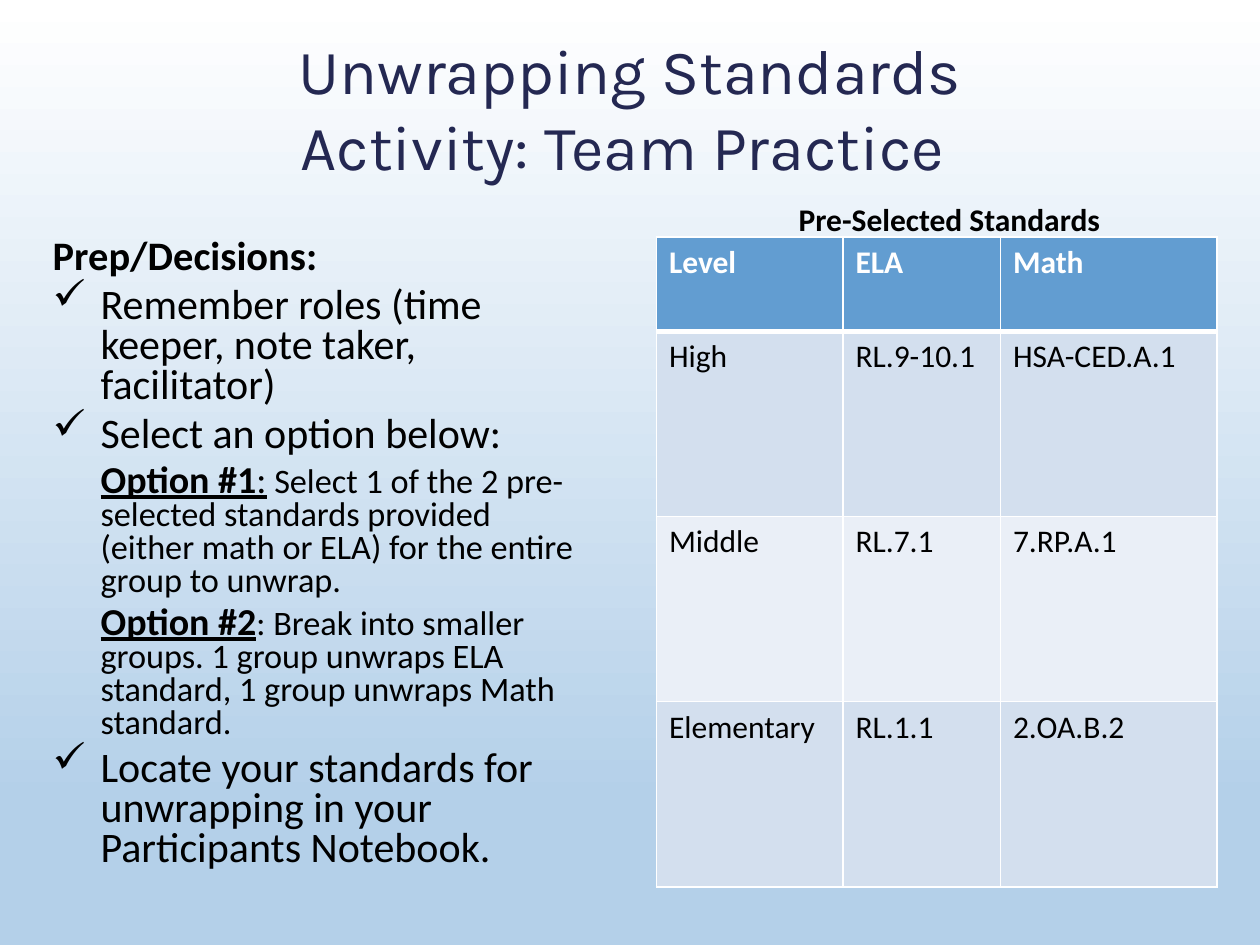
from lxml.etree import SubElement
from pptx import Presentation
from pptx.dml.color import RGBColor
from pptx.enum.text import MSO_ANCHOR, PP_ALIGN
from pptx.oxml.ns import qn
from pptx.util import Inches, Pt

BLACK, WHITE, NAVY = "000000", "FFFFFF", "242852"
HEADER_FILL, BAND_FILLS = "629DD1", ("D3DFEE", "EAEFF7")
HANG = 0.38

COLUMN_WIDTHS = (1.48, 1.25, 1.72)
ROW_HEIGHTS = (0.75, 1.47, 1.47, 1.47)
STANDARDS = (
    ("Level", "ELA", "Math"),
    ("High", "RL.9-10.1", "HSA-CED.A.1"),
    ("Middle", "RL.7.1", "7.RP.A.1"),
    ("Elementary", "RL.1.1", "2.OA.B.2"),
)

# Each paragraph: bullet, first-line indent, space before, runs of
# (text, size, bold, underline)
PREP_STEPS = (
    (None, -HANG, 0, [("Prep/Decisions:", 23.1, True, False)]),
    ("✓", -HANG, 5, [("Remember roles (time keeper, note taker, facilitator)", 24, False, False)]),
    ("✓", -HANG, 5, [("Select an option below:", 24, False, False)]),
    (None, 0, 4, [
        ("Option #1", 21.7, True, True),
        (":", 21.7, False, True),
        (" Select 1 of the 2 pre-selected standards provided "
         "(either math or ELA) for the entire group to unwrap.", 19.6, False, False),
    ]),
    (None, 0, 4, [
        ("Option #2", 21.7, True, True),
        (": Break into smaller groups. 1 group unwraps ELA standard, "
         "1 group unwraps Math standard.", 19.6, False, False),
    ]),
    ("✓", -HANG, 5, [("Locate your standards for unwrapping in your Participants Notebook.",
                      24, False, False)]),
)


def rgb(value):
    return RGBColor.from_string(value)


class SlideBuilder:
    def __init__(self, slide, font="Calibri"):
        self.slide = slide
        self.font = font

    def background(self, stops, angle):
        fill = self.slide.background.fill
        fill.gradient()
        fill.gradient_angle = angle
        for stop, (position, color) in zip(fill.gradient_stops, stops):
            stop.position = position
            stop.color.rgb = rgb(color)

    def style(self, r, size, color=BLACK, bold=False, underline=False, font=None):
        r.font.name = font or self.font
        r.font.size = Pt(size)
        r.font.bold = bold
        r.font.underline = underline
        r.font.color.rgb = rgb(color)

    def frame(self, left, top, width, height):
        box = self.slide.shapes.add_textbox(
            Inches(left), Inches(top), Inches(width), Inches(height))
        tf = box.text_frame
        tf.word_wrap = True
        return tf

    def text(self, at, content, size, align=PP_ALIGN.LEFT, anchor=MSO_ANCHOR.TOP, **style):
        tf = self.frame(*at)
        tf.vertical_anchor = anchor
        p = tf.paragraphs[0]
        p.text = content
        p.alignment = align
        for r in p.runs:
            self.style(r, size, **style)

    def steps(self, at, paragraphs):
        tf = self.frame(*at)
        for i, (bullet, indent, before, runs) in enumerate(paragraphs):
            p = tf.add_paragraph() if i else tf.paragraphs[0]
            p.line_spacing = 0.8
            p.space_before = Pt(before)
            pPr = p._p.get_or_add_pPr()
            pPr.set("marL", str(Inches(HANG)))
            pPr.set("indent", str(Inches(indent)))
            if bullet:
                SubElement(pPr, qn("a:buChar"), char=bullet)
            else:
                SubElement(pPr, qn("a:buNone"))
            for content, size, bold, underline in runs:
                r = p.add_run()
                r.text = content
                self.style(r, size, bold=bold, underline=underline)

    def borders(self, cell, **widths):
        tcPr = cell._tc.get_or_add_tcPr()
        for side in ("L", "R", "T", "B"):
            ln = SubElement(tcPr, qn(f"a:ln{side}"), w=str(Pt(widths.get(side, 1))))
            fill = SubElement(ln, qn("a:solidFill"))
            SubElement(fill, qn("a:srgbClr"), val=WHITE)

    def table(self, left, top, rows, widths, heights, size):
        table = self.slide.shapes.add_table(
            len(rows), len(widths), Inches(left), Inches(top),
            Inches(sum(widths)), Inches(sum(heights))).table
        for column, width in zip(table.columns, widths):
            column.width = Inches(width)
        for i, (row, height) in enumerate(zip(rows, heights)):
            table.rows[i].height = Inches(height)
            header = i == 0
            for j, content in enumerate(row):
                cell = table.cell(i, j)
                self.borders(cell, B=3 if header else 1, T=3 if i == 1 else 1)
                cell.fill.solid()
                cell.fill.fore_color.rgb = rgb(HEADER_FILL if header else BAND_FILLS[(i - 1) % 2])
                cell.text_frame.text = content
                self.style(cell.text_frame.paragraphs[0].runs[0], size,
                           color=WHITE if header else BLACK, bold=header)


def main():
    prs = Presentation()
    prs.slide_width, prs.slide_height = Inches(10), Inches(7.5)
    s = SlideBuilder(prs.slides.add_slide(prs.slide_layouts[6]))
    s.background([(0, WHITE), (0.85, "B4D0E9")], angle=270)
    s.table(5.21, 1.88, STANDARDS, COLUMN_WIDTHS, ROW_HEIGHTS, size=18)
    s.text((0.5, 0.25, 9, 1.25), "Unwrapping Standards\vActivity: Team Practice ", 36,
           align=PP_ALIGN.CENTER, anchor=MSO_ANCHOR.BOTTOM, color=NAVY, font="Karla")
    s.steps((0.32, 1.85, 4.42, 5.78), PREP_STEPS)
    s.text((6.24, 1.54, 2.64, 0.4), "Pre-Selected Standards", 18, bold=True)
    prs.save("out.pptx")


if __name__ == "__main__":
    main()
